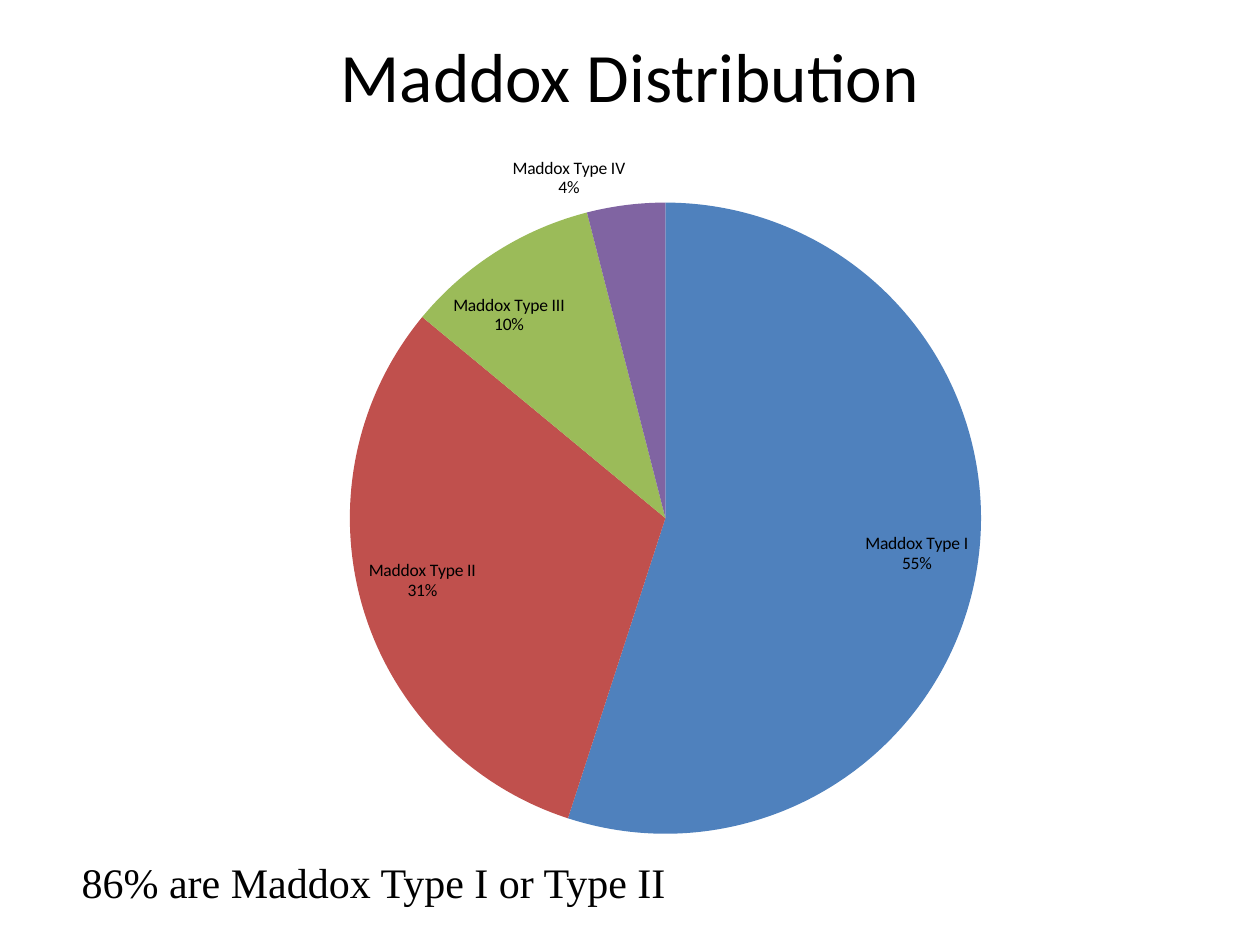
"""Build the Maddox distribution slide: a title, a pie chart and a takeaway line."""
from lxml import etree
from pptx import Presentation
from pptx.chart.data import CategoryChartData
from pptx.dml.color import RGBColor
from pptx.enum.chart import XL_CHART_TYPE, XL_LABEL_POSITION
from pptx.enum.text import MSO_ANCHOR, PP_ALIGN
from pptx.oxml import parse_xml
from pptx.oxml.ns import nsdecls, qn
from pptx.util import Inches, Pt

PIE, FIT = XL_CHART_TYPE.PIE, XL_LABEL_POSITION.BEST_FIT
MIDDLE = MSO_ANCHOR.MIDDLE
CENTER, RIGHT = PP_ALIGN.CENTER, PP_ALIGN.RIGHT

TITLE = "Maddox Distribution"
NOTE = "86% are Maddox Type I or Type II"
SHARES = [
    ("Maddox Type I", 55, "blue"),
    ("Maddox Type II", 31, "red"),
    ("Maddox Type III", 10, "green"),
    ("Maddox Type IV", 4, "purple"),
]
COLORS = {
    "text": "000000",
    "blue": "4F81BD",
    "red": "C0504D",
    "green": "9BBB59",
    "purple": "8064A2",
}
BOXES = {
    "title": (0.5, 0.3, 9, 1.25),
    "chart": (1.08, 1.08, 8.08, 5.67),
    "note": (0.33, 6.75, 5.05, 0.5),
}
PLOT = {"x": 0.21, "y": 0.09, "w": 0.62, "h": 0.89}
LABELS = {
    "show_category_name": True,
    "show_percentage": True,
    "show_value": False,
    "number_format": "0%",
    "number_format_is_linked": False,
    "position": FIT,
}


def apply(item, values):
    for key, value in values.items():
        setattr(item, key, value)


def rgb(name):
    return RGBColor.from_string(COLORS[name])


def box(name):
    return [Inches(n) for n in BOXES[name]]


def style(font, face, size):
    apply(font, {"name": face, "size": Pt(size)})
    font.color.rgb = rgb("text")


def write(shape, text, face, size, align, **frame):
    body = shape.text_frame
    apply(body, {"word_wrap": True, **frame})
    line = body.paragraphs[0]
    line.text, line.alignment = text, align
    style(line.runs[0].font, face, size)


def place_plot(chart):
    modes = '<c:layoutTarget val="inner"/><c:xMode val="edge"/><c:yMode val="edge"/>'
    sizes = "".join(f'<c:{key} val="{share}"/>' for key, share in PLOT.items())
    layout = parse_xml(
        f'<c:layout {nsdecls("c")}><c:manualLayout>{modes}{sizes}</c:manualLayout></c:layout>'
    )
    area = chart.element.find(".//" + qn("c:plotArea"))
    for old in area.findall(qn("c:layout")):
        area.remove(old)
    area.insert(0, layout)


def add_pie(slide):
    data = CategoryChartData()
    data.categories = [name for name, _, _ in SHARES]
    data.add_series("Series 1", [share for _, share, _ in SHARES])
    chart = slide.shapes.add_chart(PIE, *box("chart"), data).chart
    apply(chart, {"has_title": False, "has_legend": False})
    style(chart.font, "Calibri", 10)
    place_plot(chart)
    plot = chart.plots[0]
    plot.vary_by_categories = True
    series = plot.series[0]
    for i, (_, _, color) in enumerate(SHARES):
        fill = series.points[i].format.fill
        fill.solid()
        fill.fore_color.rgb = rgb(color)
    labels = series.data_labels
    apply(labels, LABELS)
    style(labels.font, "Calibri", 10)
    node = series._element.find(qn("c:dLbls"))
    gap = etree.Element(qn("c:separator"))
    gap.text = "\n"
    last = node.find(qn("c:showBubbleSize"))
    if last is None:
        last = node.find(qn("c:showPercent"))
    last.addnext(gap)


def main():
    deck = Presentation()
    deck.slide_width, deck.slide_height = Inches(10), Inches(7.5)
    slide = deck.slides.add_slide(deck.slide_layouts[5])
    title = slide.shapes.title
    apply(title, dict(zip(("left", "top", "width", "height"), box("title"))))
    write(title, TITLE, "Calibri", 39.6, CENTER, vertical_anchor=MIDDLE,
          margin_top=0, margin_bottom=Inches(0.67))
    add_pie(slide)
    note = slide.shapes.add_textbox(*box("note"))
    write(note, NOTE, "Times New Roman", 24, RIGHT)
    deck.save("out.pptx")


if __name__ == "__main__":
    main()
